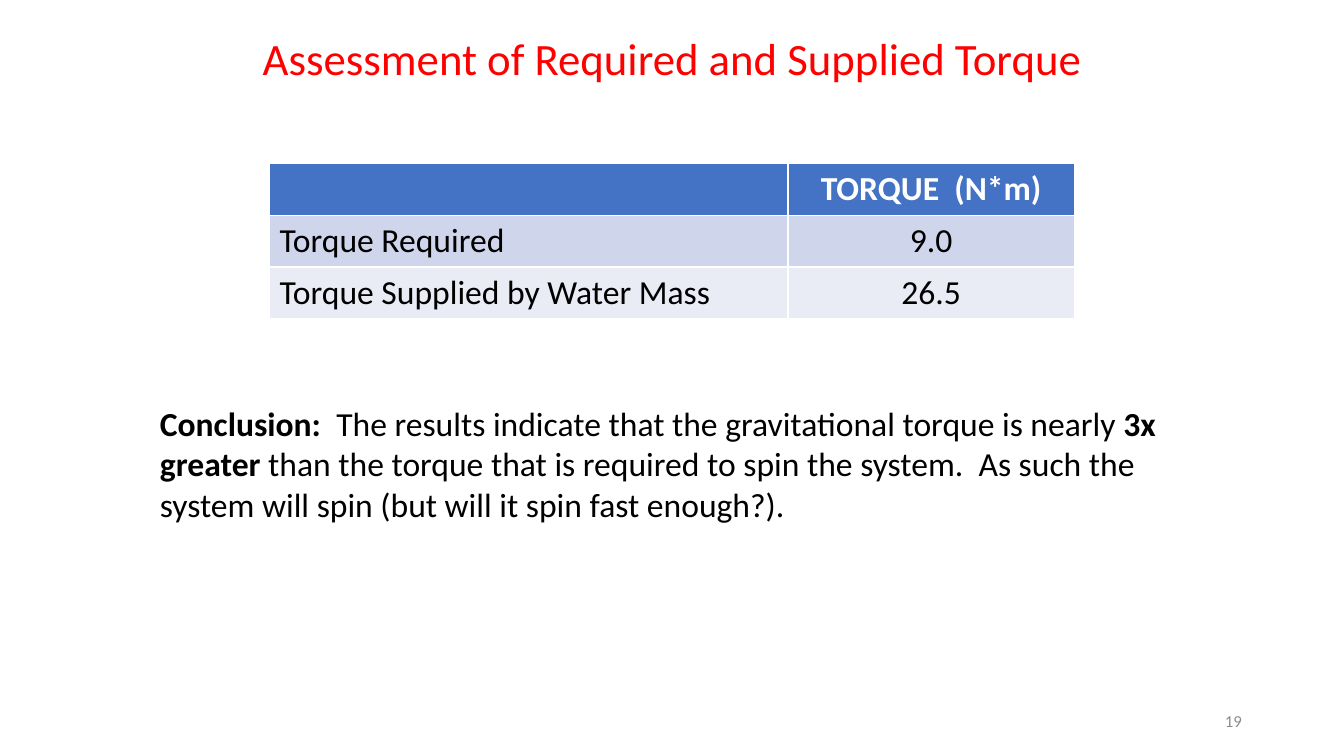
from pptx import Presentation
from pptx.dml.color import RGBColor
from pptx.enum.text import MSO_ANCHOR as Anchor, MSO_AUTO_SIZE as AutoSize, PP_ALIGN as Align
from pptx.util import Cm, Pt

RED = RGBColor(0xFF, 0x00, 0x00)
BLACK = RGBColor(0x00, 0x00, 0x00)
WHITE = RGBColor(0xFF, 0xFF, 0xFF)
GREY = RGBColor(0x8C, 0x8C, 0x8C)
HEADER_BLUE = RGBColor(0x44, 0x72, 0xC4)
BAND_COLORS = [RGBColor(0xCF, 0xD5, 0xEA), RGBColor(0xE9, 0xEB, 0xF5)]

TITLE_FONT = {"name": "Calibri", "size": Pt(32), "bold": False}
BODY_FONT = {"name": "Calibri", "size": Pt(24), "bold": False}
NUMBER_FONT = {"name": "Calibri", "size": Pt(12), "bold": False}

TORQUES = [
    ("", "TORQUE  (N*m)"),
    ("Torque Required", "9.0"),
    ("Torque Supplied by Water Mass", "26.5"),
]
CONCLUSION = [
    ("Conclusion:", True),
    ("  The results indicate that the gravitational torque is nearly ", False),
    ("3x greater ", True),
    ("than the torque that is required to spin the system.  As such the "
     "system will spin (but will it spin fast enough?).", False),
]


def format_font(font, color, values):
    for attribute, value in values.items():
        setattr(font, attribute, value)
    font.color.rgb = color


def add_title(slide, left, top, width, height):
    title = slide.shapes.title
    box = {"left": left, "top": top, "width": width, "height": height}
    for attribute, value in box.items():
        setattr(title, attribute, value)
    frame = title.text_frame
    frame.text = "Assessment of Required and Supplied Torque"
    frame.auto_size = AutoSize.NONE
    frame.vertical_anchor = Anchor.TOP
    frame.paragraphs[0].alignment = Align.CENTER
    format_font(frame.paragraphs[0].runs[0].font, RED, TITLE_FONT)


def add_torque_table(slide, left, top, width, height):
    table = slide.shapes.add_table(len(TORQUES), 2, left, top, width, height).table
    label_width = Cm(13.07)
    table.columns[0].width = label_width
    table.columns[1].width = width - label_width
    for row, texts in enumerate(TORQUES):
        is_header = row == 0
        fill_color = HEADER_BLUE if is_header else BAND_COLORS[(row - 1) % 2]
        for column, text in enumerate(texts):
            cell = table.cell(row, column)
            cell.fill.solid()
            cell.fill.fore_color.rgb = fill_color
            cell.text = text
            paragraph = cell.text_frame.paragraphs[0]
            paragraph.alignment = Align.CENTER if column else Align.LEFT
            format_font(paragraph.font, WHITE if is_header else BLACK,
                        {**BODY_FONT, "bold": is_header})
            for run in paragraph.runs:
                format_font(run.font, WHITE if is_header else BLACK,
                            {**BODY_FONT, "bold": is_header})


def add_conclusion(slide, left, top, width, height):
    frame = slide.shapes.add_textbox(left, top, width, height).text_frame
    frame.word_wrap = True
    for text, bold in CONCLUSION:
        run = frame.paragraphs[0].add_run()
        run.text = text
        format_font(run.font, BLACK, {**BODY_FONT, "bold": bold})


def add_slide_number(slide, left, top, width, height):
    frame = slide.shapes.add_textbox(left, top, width, height).text_frame
    frame.word_wrap = True
    frame.vertical_anchor = Anchor.MIDDLE
    frame.text = "19"
    frame.paragraphs[0].alignment = Align.RIGHT
    format_font(frame.paragraphs[0].runs[0].font, GREY, NUMBER_FONT)


def main():
    presentation = Presentation()
    presentation.slide_width = Cm(33.87)
    presentation.slide_height = Cm(19.05)
    slide = presentation.slides.add_slide(presentation.slide_layouts[5])
    add_title(slide, Cm(6.3), Cm(0.64), Cm(21.29), Cm(1.63))
    add_torque_table(slide, Cm(6.79), Cm(4.13), Cm(20.28), Cm(3.9))
    add_conclusion(slide, Cm(3.78), Cm(10.03), Cm(26.31), Cm(3.33))
    add_slide_number(slide, Cm(23.93), Cm(17.65), Cm(7.62), Cm(1.02))
    presentation.save("out.pptx")


if __name__ == "__main__":
    main()
